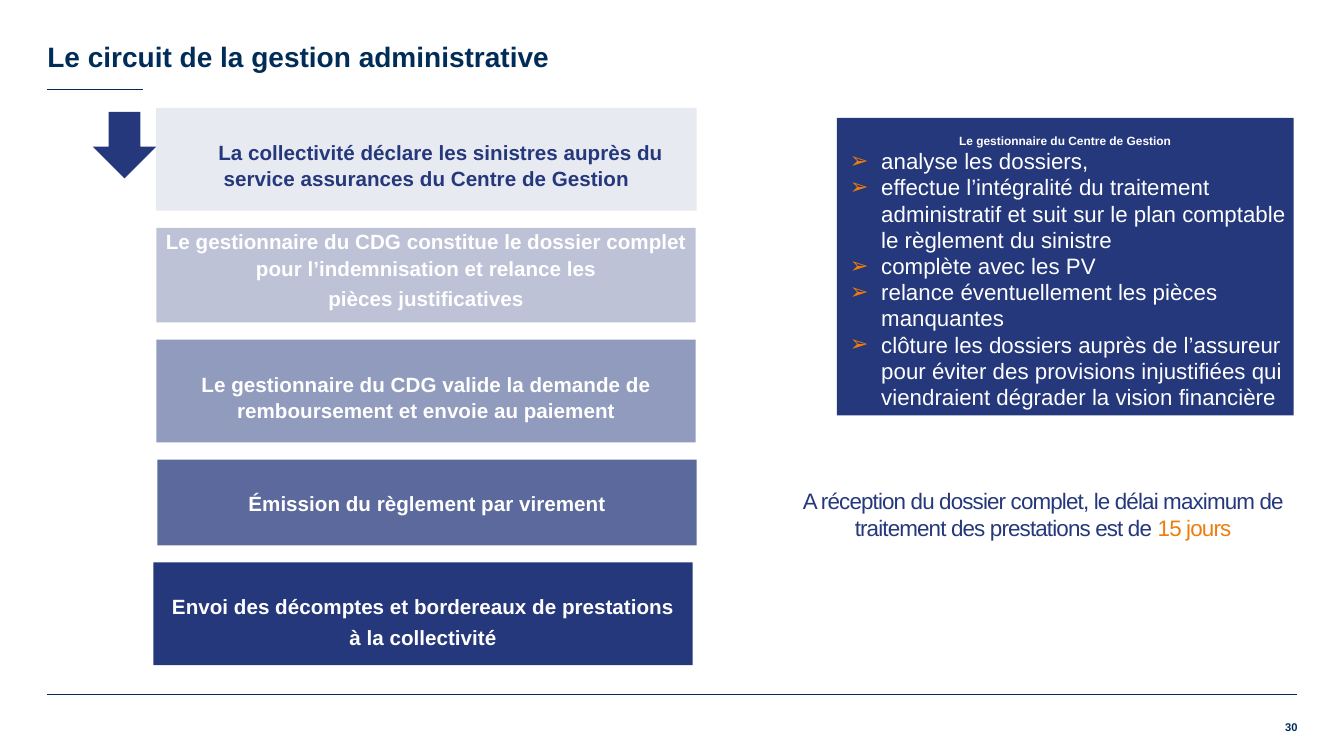
import dataclasses

import lxml.etree
import pptx
import pptx.dml.color
import pptx.enum.shapes
import pptx.enum.text
import pptx.oxml.ns
import pptx.util

Inches = pptx.util.Inches
Pt = pptx.util.Pt
Align = pptx.enum.text.PP_ALIGN
Anchor = pptx.enum.text.MSO_ANCHOR
Preset = pptx.enum.shapes.MSO_SHAPE
qn = pptx.oxml.ns.qn


@dataclasses.dataclass(frozen=True)
class Theme:
    font: str = "Arial"
    navy: str = "002C58"
    blue: str = "25387C"
    orange: str = "EF7D0B"
    white: str = "FFFFFF"
    title: float = 20
    step: float = 14.7
    heading: float = 8.5
    task: float = 15.9
    note: float = 16
    number: float = 8
    leading: float = 18.7


THEME = Theme()

STEPS = [
    (1.55, 1.07, 5.36, 1.02, 10, 0.3,
     ["La collectivité déclare les sinistres auprès du service assurances du Centre de Gestion"]),
    (1.55, 2.26, 5.35, 0.94, 30, 0,
     ["Le gestionnaire du CDG constitue le dossier complet pour l’indemnisation et relance les",
      "pièces justificatives"]),
    (1.55, 3.37, 5.35, 1.02, 50, 0.3,
     ["Le gestionnaire du CDG valide la demande de remboursement et envoie au paiement"]),
    (1.56, 4.56, 5.35, 0.85, 75, 0.3, ["Émission du règlement par virement"]),
    (1.52, 5.58, 5.35, 1.02, 100, 0.3,
     ["Envoi des décomptes et bordereaux de prestations", "à la collectivité"]),
]

TASKS = [
    "analyse les dossiers,",
    "effectue l’intégralité du traitement administratif et suit sur le plan comptable "
    "le règlement du sinistre",
    "complète avec les PV",
    "relance éventuellement les pièces manquantes",
    "clôture les dossiers auprès de l’assureur pour éviter des provisions injustifiées "
    "qui viendraient dégrader la vision financière",
]


def rgb(color):
    return pptx.dml.color.RGBColor.from_string(color)


def style(font, size, color, bold=False):
    font.name = THEME.font
    font.size = Pt(size)
    font.bold = bold
    font.color.rgb = rgb(color)


def prepare_frame(shape, anchor=Anchor.TOP, top=0):
    frame = shape.text_frame
    frame.word_wrap = True
    frame.vertical_anchor = anchor
    frame.margin_left = frame.margin_right = frame.margin_bottom = 0
    frame.margin_top = Inches(top)
    return frame


def add_rule(slide, y, right):
    line = slide.shapes.add_connector(
        pptx.enum.shapes.MSO_CONNECTOR.STRAIGHT,
        Inches(0.47), Inches(y), Inches(right), Inches(y))
    line.line.color.rgb = rgb(THEME.navy)
    line.line.width = Pt(0.5)
    lxml.etree.SubElement(line._element.spPr, qn("a:effectLst"))


def add_label(slide, box, text, size, color, bold=False, align=Align.LEFT, anchor=Anchor.TOP):
    shape = slide.shapes.add_textbox(*map(Inches, box))
    frame = prepare_frame(shape, anchor)
    frame.text = text
    paragraph = frame.paragraphs[0]
    paragraph.alignment = align
    style(paragraph.runs[0].font, size, color, bold)
    return shape


def add_block(slide, preset, box, opacity=100):
    shape = slide.shapes.add_shape(preset, *map(Inches, box))
    shape.shadow.inherit = False
    shape.fill.solid()
    shape.fill.fore_color.rgb = rgb(THEME.blue)
    shape.line.fill.background()
    if opacity < 100:
        color = shape._element.spPr.find(qn("a:solidFill")).find(qn("a:srgbClr"))
        lxml.etree.SubElement(color, qn("a:alpha"), val=str(opacity * 1000))
    return shape


def add_step(slide, left, top, width, height, opacity, inset, lines):
    shape = add_block(slide, Preset.RECTANGLE, (left, top, width, height), opacity)
    frame = prepare_frame(shape, top=inset)
    frame.text = "\n".join(lines)
    color = THEME.blue if opacity == 10 else THEME.white
    for index, paragraph in enumerate(frame.paragraphs):
        paragraph.alignment = Align.CENTER
        paragraph.line_spacing = Pt(THEME.leading)
        if index:
            paragraph.space_before = Pt(3)
        style(paragraph.runs[0].font, THEME.step, color, True)
    return frame


def add_bullet(paragraph):
    properties = paragraph._p.get_or_add_pPr()
    properties.set("marL", str(Inches(0.44)))
    properties.set("indent", str(Inches(-0.31)))
    color = lxml.etree.SubElement(properties, qn("a:buClr"))
    lxml.etree.SubElement(color, qn("a:srgbClr"), val=THEME.orange)
    lxml.etree.SubElement(properties, qn("a:buFont"), typeface=THEME.font)
    lxml.etree.SubElement(properties, qn("a:buChar"), char="➢")


def add_task_panel(slide):
    frame = prepare_frame(add_block(slide, Preset.RECTANGLE, (8.3, 1.17, 4.53, 2.95)))
    frame.text = "\n".join(["Le gestionnaire du Centre de Gestion"] + TASKS)
    heading, *tasks = frame.paragraphs
    heading.alignment = Align.CENTER
    heading.line_spacing = 2.1
    style(heading.runs[0].font, THEME.heading, THEME.white, True)
    for paragraph in tasks:
        add_bullet(paragraph)
        paragraph.alignment = Align.LEFT
        paragraph.line_spacing = Pt(THEME.leading)
        style(paragraph.runs[0].font, THEME.task, THEME.white)


def add_deadline(slide):
    shape = add_label(
        slide, (7.95, 4.83, 4.79, 0.54),
        "A réception du dossier complet, le délai maximum de traitement des prestations est de ",
        THEME.note, THEME.blue, align=Align.CENTER)
    paragraph = shape.text_frame.paragraphs[0]
    delay = paragraph.add_run()
    delay.text = "15 jours"
    style(delay.font, THEME.note, THEME.orange)
    for run in paragraph.runs:
        run._r.get_or_add_rPr().set("spc", "-60")


def main():
    presentation = pptx.Presentation()
    presentation.slide_width = Inches(13.33)
    presentation.slide_height = Inches(7.5)
    slide = presentation.slides.add_slide(presentation.slide_layouts[6])

    add_rule(slide, 6.89, 12.86)
    add_rule(slide, 0.89, 1.42)
    add_label(slide, (0.47, 0, 12.39, 0.73), "Le circuit de la gestion administrative",
              THEME.title, THEME.navy, True, anchor=Anchor.BOTTOM)
    add_task_panel(slide)
    add_deadline(slide)
    frames = [add_step(slide, *step) for step in STEPS]
    frames[0].paragraphs[0]._p.get_or_add_pPr().set("indent", str(Inches(0.28)))
    add_block(slide, Preset.DOWN_ARROW, (0.92, 1.11, 0.63, 0.66))
    add_label(slide, (12.48, 7.15, 0.39, 0.2), "30", THEME.number, THEME.navy, True, Align.RIGHT)

    presentation.save("out.pptx")


if __name__ == "__main__":
    main()
